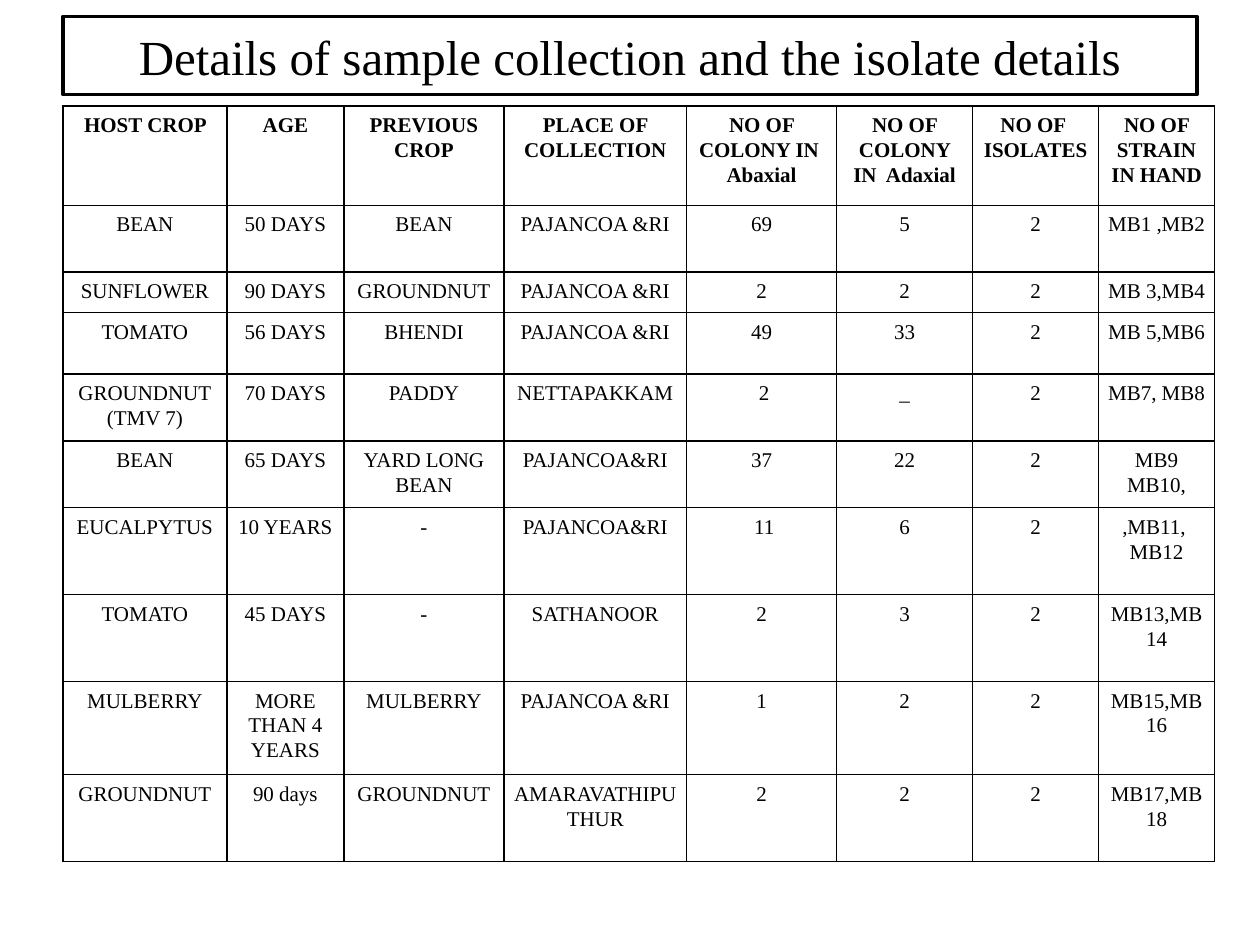
import pptx
import pptx.util
import pptx.dml.color
import pptx.enum.shapes
import pptx.enum.text
import pptx.oxml.ns
import lxml.etree

Inches = pptx.util.Inches
Pt = pptx.util.Pt

TITLE = "Details of sample collection and the isolate details"
COLS = [1.3, 0.93, 1.27, 1.45, 1.19, 1.08, 1, 0.92]
TALL = [0.79, 0.53, 0.32, 0.49, 0.53, 0.53, 0.69, 0.69, 0.74, 0.69]
ROWS = [
    " HOST CROP |AGE|PREVIOUS CROP|PLACE OF COLLECTION|NO OF COLONY IN  Abaxial"
    "|NO OF COLONY IN  Adaxial|NO OF \nISOLATES|NO OF STRAIN IN HAND",
    "BEAN|50 DAYS|BEAN|PAJANCOA &RI|69|5|2|MB1 ,MB2",
    "SUNFLOWER|90 DAYS|GROUNDNUT|PAJANCOA &RI|2|2|2|MB 3,MB4",
    "TOMATO|56 DAYS|BHENDI|PAJANCOA &RI|49|33|2|MB 5,MB6",
    "GROUNDNUT\n(TMV 7)|70 DAYS|PADDY|NETTAPAKKAM| 2|_|2|MB7, MB8",
    "BEAN|65 DAYS|YARD LONG BEAN|PAJANCOA&RI|37|22|2|MB9\nMB10,",
    "EUCALPYTUS|10 YEARS|-|PAJANCOA&RI| 11|6|2|,MB11,  MB12",
    "TOMATO|45 DAYS|-|SATHANOOR|2|3|2|MB13,MB14",
    "MULBERRY|MORE THAN 4 YEARS|MULBERRY|PAJANCOA &RI|1|2|2|MB15,MB16",
    "GROUNDNUT|90 days|GROUNDNUT|AMARAVATHIPUTHUR|2|2|2|MB17,MB18",
]


def hue(code):
    """Turn a hex string into a colour."""
    return pptx.dml.color.RGBColor.from_string(code)


class Page:
    """Hold the style and the current slide."""

    font = "Times New Roman"
    ink = "000000"
    paper = "FFFFFF"

    def __init__(self, deck):
        self.slide = deck.slides.add_slide(deck.slide_layouts[6])

    def style(self, frame, size, bold=False, pitch=1.0):
        for para in frame.paragraphs:
            para.alignment = pptx.enum.text.PP_ALIGN.CENTER
            para.line_spacing = pitch
            for run in para.runs:
                run.font.name = self.font
                run.font.size = Pt(size)
                run.font.bold = bold
                run.font.color.rgb = hue(self.ink)

    def title(self, text, left, top, width, height):
        kind = pptx.enum.shapes.MSO_SHAPE.RECTANGLE
        box = self.slide.shapes.add_shape(
            kind, Inches(left), Inches(top), Inches(width), Inches(height))
        box.shadow.inherit = False
        box.fill.solid()
        box.fill.fore_color.rgb = hue(self.paper)
        box.line.color.rgb = hue(self.ink)
        box.line.width = Pt(2)
        frame = box.text_frame
        frame.text = text
        frame.word_wrap = True
        frame.vertical_anchor = pptx.enum.text.MSO_ANCHOR.MIDDLE
        self.style(frame, 28)

    def border(self, cell):
        qn = pptx.oxml.ns.qn
        props = cell._tc.get_or_add_tcPr()
        for side in "LRTB":
            line = lxml.etree.SubElement(
                props, qn("a:ln" + side), w=str(Pt(1)))
            fill = lxml.etree.SubElement(line, qn("a:solidFill"))
            lxml.etree.SubElement(fill, qn("a:srgbClr"), val=self.ink)

    def table(self, rows, left, top, cols, tall):
        grid = self.slide.shapes.add_table(
            len(rows), len(cols), Inches(left), Inches(top),
            Inches(sum(cols)), Inches(sum(tall))).table
        grid.horz_banding = False
        for col, width in zip(grid.columns, cols):
            col.width = Inches(width)
        for row, height in zip(grid.rows, tall):
            row.height = Inches(height)
        for r, row in enumerate(rows):
            for c, text in enumerate(row.split("|")):
                cell = grid.cell(r, c)
                cell.text_frame.text = text
                cell.margin_left = cell.margin_right = Inches(0.07)
                cell.margin_top = cell.margin_bottom = Inches(0.05)
                self.border(cell)
                cell.fill.background()
                self.style(cell.text_frame, 12, r == 0, 1.07)


def main():
    deck = pptx.Presentation()
    deck.slide_width, deck.slide_height = Inches(10), Inches(7.5)
    page = Page(deck)
    page.title(TITLE, 0.5, 0.13, 9, 0.62)
    page.table(ROWS, 0.5, 0.84, COLS, TALL)
    deck.save("out.pptx")


if __name__ == "__main__":
    main()
